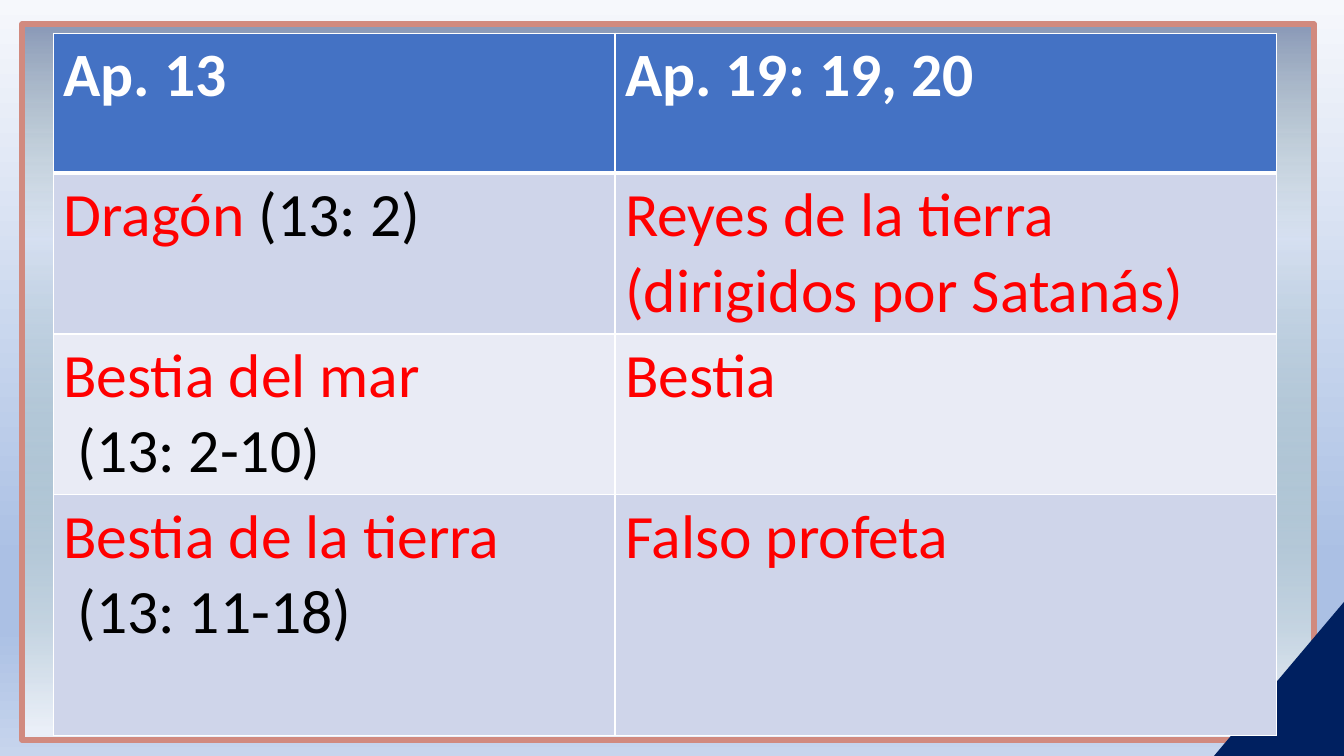
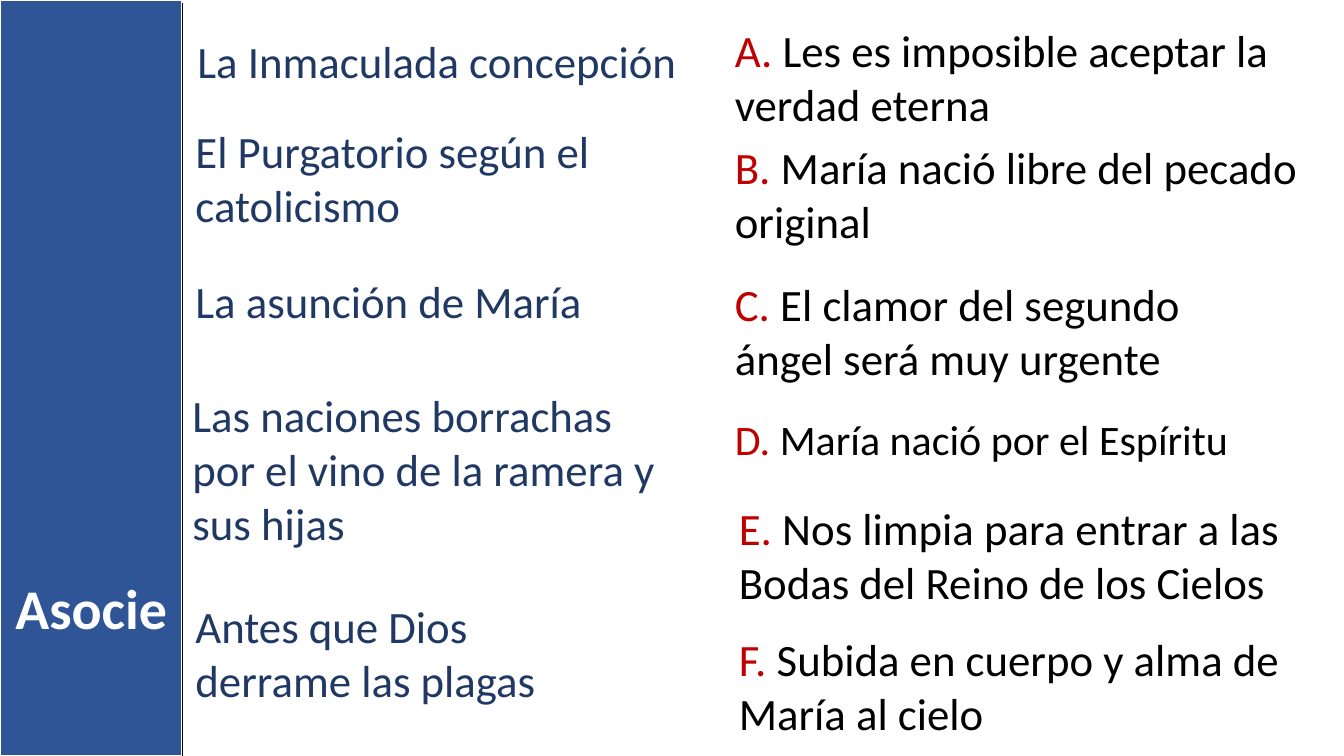
from lxml import etree
from pptx import Presentation
from pptx.dml.color import RGBColor
from pptx.enum.shapes import MSO_CONNECTOR, MSO_SHAPE
from pptx.enum.text import MSO_AUTO_SIZE, PP_ALIGN
from pptx.oxml.ns import qn
from pptx.util import Emu, Pt

RECTANGLE = MSO_SHAPE.RECTANGLE
TRIANGLE = MSO_SHAPE.RIGHT_TRIANGLE
STRAIGHT = MSO_CONNECTOR.STRAIGHT
GROW = MSO_AUTO_SIZE.SHAPE_TO_FIT_TEXT
LEFT, CENTER = PP_ALIGN.LEFT, PP_ALIGN.CENTER

EMU_PER_PX = 9144
PAGE_WIDTH, PAGE_HEIGHT = 1333, 750
FONT = "Calibri"
WHITE, BLACK, RED = "FFFFFF", "000000", "FF0000"
NAVY, INK, CRIMSON = "002060", "203864", "C00000"
HEADER_FILL, BAND_FILL = "4472C4", "2F5597"
ROW_FILLS = ["CFD5EA", "E9EBF5"]

TABLE_SIZE = 44
COLUMN_WIDTHS = [557, 656]
ROW_HEIGHTS = [139, 139, 139, 239]
TABLE_ROWS = [
    [[[("Ap. 13", WHITE)]], [[("Ap. 19: 19, 20", WHITE)]]],
    [[[("Dragón", RED), (" (13: 2)", BLACK)]],
     [[("Reyes de la tierra (dirigidos por Satanás)", RED)]]],
    [[[("Bestia del mar", RED)], [(" (13: 2-10)", BLACK)]],
     [[("Bestia", RED)]]],
    [[[("Bestia de la tierra", RED)], [(" (13: 11-18)", BLACK)]],
     [[("Falso profeta", RED)]]],
]

TERMS = [
    ("La Inmaculada concepción", (186, 29, 517, 64)),
    ("El Purgatorio según el catolicismo", (184, 118, 516, 118)),
    ("La asunción de María", (184, 267, 446, 64)),
    ("Las naciones borrachas por el vino de la ramera y sus hijas",
     (181, 380, 494, 172)),
    ("Antes que Dios derrame las plagas", (184, 589, 446, 118)),
]
ANSWERS = [
    ("A. ", "Les es imposible aceptar la verdad eterna", (719, 18, 596, 118), 32),
    ("B. ", "María nació libre del pecado original", (719, 134, 596, 118), 32),
    ("C. ", "El clamor del segundo ángel será muy urgente",
     (719, 270, 560, 118), 32),
    ("D. ", "María nació por el Espíritu", (719, 405, 523, 61), 30),
    ("E. ", "Nos limpia para entrar a las Bodas del Reino de los Cielos",
     (723, 492, 567, 118), 32),
    ("F. ", "Subida en cuerpo y alma de María al cielo",
     (723, 622, 567, 118), 32),
]


def px(length):
    return Emu(length * EMU_PER_PX)


def rgb(color):
    return RGBColor.from_string(color)


def paint(fill, color):
    fill.solid()
    fill.fore_color.rgb = rgb(color)


def paint_gradient(fill, owner, stops, angle):
    fill.gradient()
    fill.gradient_angle = 360 - angle
    gradient = next(owner.iter(qn("a:gradFill")))
    stop_list = gradient.find(qn("a:gsLst"))
    for old_stop in list(stop_list):
        stop_list.remove(old_stop)
    for position, color, opacity in stops:
        stop = etree.SubElement(stop_list, qn("a:gs"), pos=str(position * 1000))
        tint = etree.SubElement(stop, qn("a:srgbClr"), val=color)
        if opacity < 100:
            etree.SubElement(tint, qn("a:alpha"), val=str(opacity * 1000))


def outline(line, color, width):
    paint(line.fill, color)
    line.width = Pt(width)


def add_block(page, preset, place):
    block = page.shapes.add_shape(preset, *map(px, place))
    block.shadow.inherit = False
    return block


def write(frame, lines, size, bold=False, align=LEFT):
    for index, runs in enumerate(lines):
        para = frame.add_paragraph() if index else frame.paragraphs[0]
        para.alignment = align
        for text, color in runs:
            span = para.add_run()
            span.text = text
            style = {"name": FONT, "size": Pt(size), "bold": bold}
            for name, value in style.items():
                setattr(span.font, name, value)
            span.font.color.rgb = rgb(color)


def add_text(page, place, runs, size, **style):
    box = page.shapes.add_textbox(*map(px, place))
    box.text_frame.word_wrap = True
    box.text_frame.auto_size = GROW
    write(box.text_frame, [runs], size, **style)


def add_border(cell, side, color, width):
    properties = cell._tc.get_or_add_tcPr()
    border = etree.SubElement(properties, qn("a:ln" + side), w=str(Pt(width)))
    solid = etree.SubElement(border, qn("a:solidFill"))
    etree.SubElement(solid, qn("a:srgbClr"), val=color)


def add_comparison(page, left, top):
    place = (left, top, sum(COLUMN_WIDTHS), sum(ROW_HEIGHTS))
    table = page.shapes.add_table(
        len(ROW_HEIGHTS), len(COLUMN_WIDTHS), *map(px, place)).table
    for column, width in zip(table.columns, COLUMN_WIDTHS):
        column.width = px(width)
    for index, (row, height, texts) in enumerate(
            zip(table.rows, ROW_HEIGHTS, TABLE_ROWS)):
        row.height = px(height)
        is_header = index == 0
        widths = {"L": 1, "R": 1, "T": 3 if index == 1 else 1,
                  "B": 3 if is_header else 1}
        fill = HEADER_FILL if is_header else ROW_FILLS[(index - 1) % 2]
        for cell, lines in zip(row.cells, texts):
            for side, width in widths.items():
                add_border(cell, side, WHITE, width)
            paint(cell.fill, fill)
            write(cell.text_frame, lines, TABLE_SIZE, bold=is_header)


def add_line(page, start, end, color, width):
    line = page.shapes.add_connector(STRAIGHT, *map(px, start + end))
    outline(line.line, color, width)
    etree.SubElement(line._element.spPr, qn("a:effectLst"))


def build_comparison_page(page):
    paint_gradient(page.background.fill, page.element, [
        (0, "F6F8FC", 100), (74, "ABC0E4", 100),
        (83, "ABC0E4", 100), (100, "C7D5ED", 100)], 90)
    panel = add_block(page, RECTANGLE, (22, 24, 1281, 710))
    paint_gradient(panel.fill, panel.element, [
        (2, WHITE, 66), (70, "558868", 0), (100, NAVY, 43)], 270)
    outline(panel.line, "D18A7F", 4.5)
    corner = add_block(page, TRIANGLE, (1192, 608, 154, 130))
    corner.rotation = 270
    paint(corner.fill, NAVY)
    corner.line.fill.background()
    add_comparison(page, 53, 33)


def build_matching_page(page):
    paint(page.background.fill, WHITE)
    band_width = 181
    band = add_block(page, RECTANGLE, (0, 0, band_width, PAGE_HEIGHT))
    paint(band.fill, BAND_FILL)
    outline(band.line, WHITE, 1.5)
    for text, place in TERMS:
        add_text(page, place, [(text, INK)], 32)
    for letter, text, place, size in ANSWERS:
        add_text(page, place, [(letter, CRIMSON), (text, BLACK)], size)
    add_text(page, (0, 564, band_width, 77), [("Asocie", WHITE)], 40,
             bold=True, align=CENTER)
    add_line(page, (band_width, 3), (band_width, PAGE_HEIGHT), BLACK, 1)


def main():
    deck = Presentation()
    deck.slide_width, deck.slide_height = px(PAGE_WIDTH), px(PAGE_HEIGHT)
    for build in (build_comparison_page, build_matching_page):
        build(deck.slides.add_slide(deck.slide_layouts[6]))
    deck.save("out.pptx")


if __name__ == "__main__":
    main()
